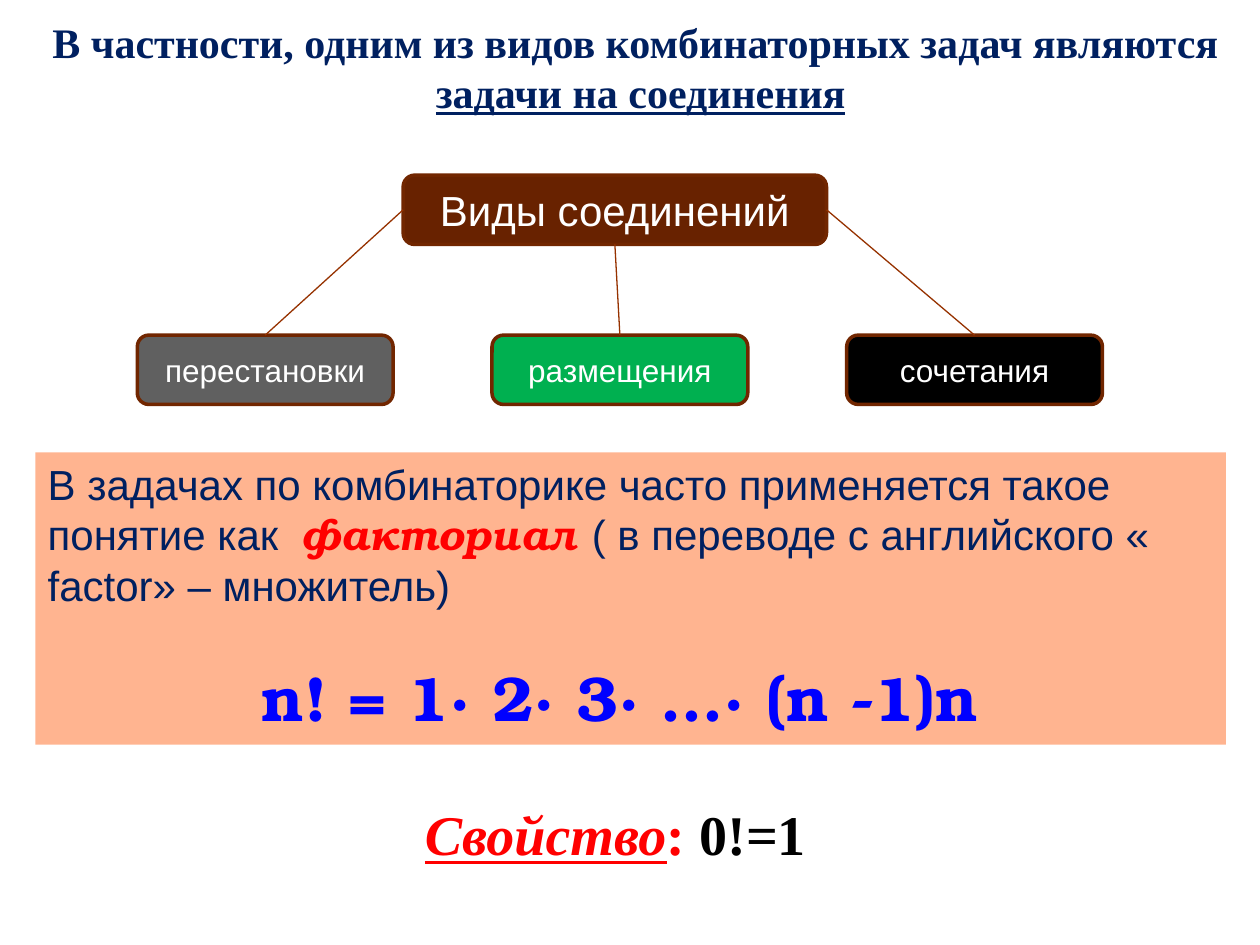
from dataclasses import dataclass

from lxml import etree
from pptx import Presentation
from pptx.dml.color import RGBColor
from pptx.enum.shapes import MSO_CONNECTOR, MSO_SHAPE
from pptx.enum.text import MSO_ANCHOR, PP_ALIGN
from pptx.oxml.ns import qn
from pptx.util import Inches, Pt

ROUNDED, RECTANGLE = MSO_SHAPE.ROUNDED_RECTANGLE, MSO_SHAPE.RECTANGLE
STRAIGHT = MSO_CONNECTOR.STRAIGHT
LEFT, CENTER = PP_ALIGN.LEFT, PP_ALIGN.CENTER
TOP, MIDDLE = MSO_ANCHOR.TOP, MSO_ANCHOR.MIDDLE
TOP_SITE, LEFT_SITE, BOTTOM_SITE, RIGHT_SITE = range(4)


@dataclass(frozen=True)
class Theme:
    sans: str = "Arial"
    serif: str = "Times New Roman"
    display: str = "TeX Gyre Bonum"
    navy: str = "002060"
    red: str = "FF0000"
    blue: str = "0000FF"
    black: str = "000000"
    white: str = "FFFFFF"
    brown: str = "682200"
    border: str = "712600"
    connector: str = "963200"
    gray: str = "606060"
    green: str = "00B050"
    peach: str = "FF9B6A"
    label_size: int = 18
    body_size: int = 24
    property_size: int = 32
    formula_size: int = 36


def add_run(paragraph, text, *, font, size, color,
            bold=False, italic=False, underline=False):
    run = paragraph.add_run()
    run.text = text
    run.font.name = font
    run.font.size = Pt(size)
    run.font.color.rgb = RGBColor.from_string(color)
    run.font.bold = bold
    run.font.italic = italic
    run.font.underline = underline


class SlideBuilder:
    def __init__(self, slide, theme):
        self.slide = slide
        self.theme = theme

    def fill_text(self, shape, paragraphs, anchor=TOP):
        """Write paragraphs given as (alignment, space before, runs)."""
        frame = shape.text_frame
        frame.word_wrap = True
        frame.vertical_anchor = anchor
        for index, (alignment, space_before, runs) in enumerate(paragraphs):
            paragraph = frame.add_paragraph() if index else frame.paragraphs[0]
            paragraph.alignment = alignment
            if space_before:
                paragraph.space_before = Pt(space_before)
            for text, style in runs:
                add_run(paragraph, text, **style)

    def text_box(self, left, top, width, height, paragraphs):
        box = self.slide.shapes.add_textbox(
            Inches(left), Inches(top), Inches(width), Inches(height))
        self.fill_text(box, paragraphs)

    def box(self, kind, left, top, width, height, fill, opacity=100):
        shape = self.slide.shapes.add_shape(
            kind, Inches(left), Inches(top), Inches(width), Inches(height))
        shape.shadow.inherit = False
        shape.fill.solid()
        shape.fill.fore_color.rgb = RGBColor.from_string(fill)
        shape.line.fill.background()
        if opacity < 100:
            color = shape._element.spPr.find(qn("a:solidFill"))[0]
            etree.SubElement(color, qn("a:alpha")).set("val", str(opacity * 1000))
        return shape

    def panel(self, left, top, width, height, fill, paragraphs, opacity=100):
        shape = self.box(RECTANGLE, left, top, width, height, fill, opacity)
        self.fill_text(shape, paragraphs)

    def node(self, left, top, width, text, fill, size):
        shape = self.box(ROUNDED, left, top, width, 0.55, fill)
        shape.line.color.rgb = RGBColor.from_string(self.theme.border)
        shape.line.width = Pt(2)
        style = dict(font=self.theme.sans, size=size, color=self.theme.white)
        self.fill_text(shape, [(CENTER, 0, [(text, style)])], MIDDLE)
        return shape

    def connect(self, parent, parent_site, child):
        connector = self.slide.shapes.add_connector(STRAIGHT, 0, 0, 0, 0)
        connector.begin_connect(parent, parent_site)
        connector.end_connect(child, TOP_SITE)
        connector.line.color.rgb = RGBColor.from_string(self.theme.connector)
        connector.line.width = Pt(0.75)
        etree.SubElement(connector._element.spPr, qn("a:effectLst"))


def main():
    presentation = Presentation()
    presentation.slide_width = Inches(10)
    presentation.slide_height = Inches(7.5)
    theme = Theme()
    builder = SlideBuilder(
        presentation.slides.add_slide(presentation.slide_layouts[6]), theme)

    title = dict(font=theme.serif, size=theme.body_size, color=theme.navy, bold=True)
    builder.text_box(0.28, 0.08, 9.61, 1.72, [
        (CENTER, 0, [("В частности, одним из видов комбинаторных задач являются ", title)]),
        (CENTER, 0, [("задачи на соединения", {**title, "underline": True})]),
    ])

    root = builder.node(3.2, 1.39, 3.36, "Виды соединений", theme.brown, theme.body_size)
    kinds = [
        ("перестановки", theme.gray, LEFT_SITE),
        ("размещения", theme.green, BOTTOM_SITE),
        ("сочетания", theme.black, RIGHT_SITE),
    ]
    for column, (name, fill, root_site) in enumerate(kinds):
        child = builder.node(1.09 + column * 2.815, 2.66, 2.03, name, fill, theme.label_size)
        builder.connect(root, root_site, child)

    body = dict(font=theme.sans, size=theme.body_size, color=theme.navy)
    term = dict(font=theme.display, size=theme.body_size, color=theme.red,
                bold=True, italic=True)
    formula = dict(font=theme.display, size=theme.formula_size, color=theme.blue, bold=True)
    builder.panel(0.28, 3.59, 9.45, 2.32, theme.peach, [
        (LEFT, 0, [
            ("В задачах по комбинаторике часто применяется такое понятие как  ", body),
            ("факториал ", term),
            ("( в переводе с английского « factor» – множитель)", body),
        ]),
        (CENTER, 28, [("n! = 1· 2· 3· …· (n -1)n ", formula)]),
    ], opacity=74)

    rule = dict(font=theme.serif, size=theme.property_size, color=theme.red, bold=True)
    builder.panel(0.52, 6.3, 8.73, 0.64, theme.white, [
        (CENTER, 0, [
            ("Свойство", {**rule, "italic": True, "underline": True}),
            (": ", rule),
            ("0!=1", {**rule, "color": theme.black}),
        ]),
    ])

    presentation.save("out.pptx")


if __name__ == "__main__":
    main()
